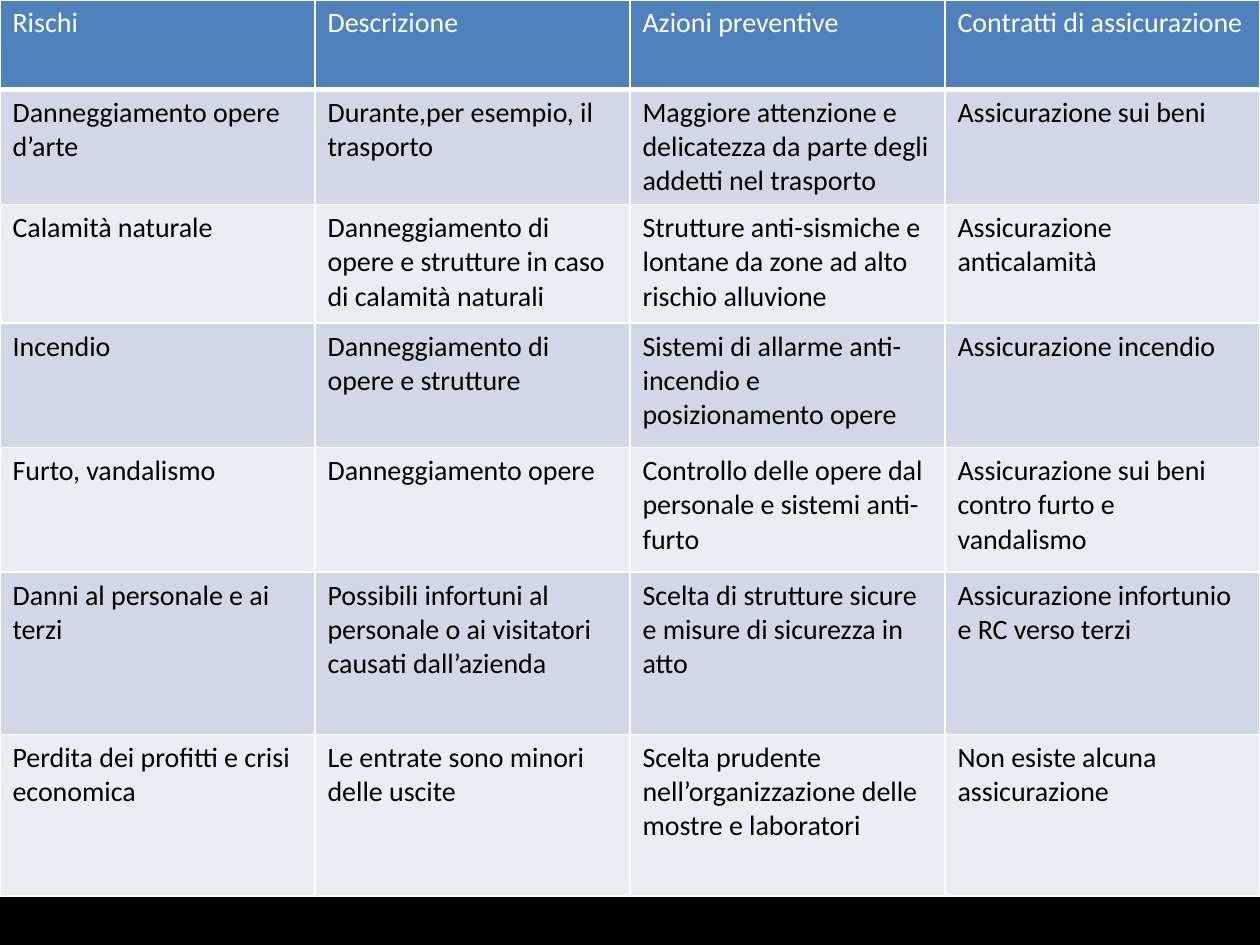
from pptx import Presentation
from pptx.dml.color import RGBColor
from pptx.oxml.ns import qn
from pptx.util import Pt
from lxml import etree

ROWS = [
    ("Rischi", "Descrizione", "Azioni preventive", "Contratti di assicurazione"),
    ("Danneggiamento opere d’arte",
     "Durante,per esempio, il trasporto",
     "Maggiore attenzione e delicatezza da parte degli addetti nel trasporto",
     "Assicurazione sui beni"),
    ("Calamità naturale",
     "Danneggiamento di opere e strutture in caso di calamità naturali",
     "Strutture anti-sismiche e lontane da zone ad alto rischio alluvione",
     "Assicurazione anticalamità"),
    ("Incendio",
     "Danneggiamento di opere e strutture",
     "Sistemi di allarme anti-incendio e posizionamento opere",
     "Assicurazione incendio"),
    ("Furto, vandalismo",
     "Danneggiamento opere",
     "Controllo delle opere dal personale e sistemi anti-furto",
     "Assicurazione sui beni contro furto e vandalismo"),
    ("Danni al personale e ai terzi",
     "Possibili infortuni al personale o ai visitatori causati dall’azienda",
     "Scelta di strutture sicure e misure di sicurezza in atto",
     "Assicurazione infortunio e RC verso terzi"),
    ("Perdita dei profitti e crisi economica",
     "Le entrate sono minori delle uscite",
     "Scelta prudente nell’organizzazione delle mostre e laboratori",
     "Non esiste alcuna assicurazione"),
]
ROW_HEIGHTS = [51, 65.8, 67.7, 71.2, 71.2, 92.8, 92.3]
SLIDE_W, SLIDE_H = 720, 540

THEME = {
    "background": "000000",
    "header": {"fill": "4F81BD", "text": "FFFFFF", "bottom": 3},
    "bands": [
        {"fill": "D0D8E8", "text": "000000", "bottom": 1},
        {"fill": "E9EDF4", "text": "000000", "bottom": 1},
    ],
    "border": "FFFFFF",
    "font": {"name": "Calibri", "size": Pt(16), "bold": False},
}


def add_borders(cell, bottom):
    tc_pr = cell._tc.get_or_add_tcPr()
    for side, width in {"L": 1, "R": 1, "T": 1, "B": bottom}.items():
        ln = etree.SubElement(tc_pr, qn(f"a:ln{side}"), w=str(Pt(width)))
        fill = etree.SubElement(ln, qn("a:solidFill"))
        etree.SubElement(fill, qn("a:srgbClr"), val=THEME["border"])


def fill_cell(cell, text, style):
    add_borders(cell, style["bottom"])
    cell.fill.solid()
    cell.fill.fore_color.rgb = RGBColor.from_string(style["fill"])
    r = cell.text_frame.paragraphs[0].add_run()
    r.text = text
    for name, value in THEME["font"].items():
        setattr(r.font, name, value)
    r.font.color.rgb = RGBColor.from_string(style["text"])


def main():
    prs = Presentation()
    prs.slide_width, prs.slide_height = Pt(SLIDE_W), Pt(SLIDE_H)
    s = prs.slides.add_slide(prs.slide_layouts[6])
    s.background.fill.solid()
    s.background.fill.fore_color.rgb = RGBColor.from_string(THEME["background"])

    n_cols = len(ROWS[0])
    table = s.shapes.add_table(len(ROWS), n_cols, 0, 0,
                               Pt(SLIDE_W), Pt(sum(ROW_HEIGHTS))).table
    for col in table.columns:
        col.width = Pt(SLIDE_W / n_cols)
    for i, (texts, height) in enumerate(zip(ROWS, ROW_HEIGHTS)):
        table.rows[i].height = Pt(height)
        style = THEME["bands"][(i - 1) % 2] if i else THEME["header"]
        for j, text in enumerate(texts):
            fill_cell(table.cell(i, j), text, style)

    prs.save("out.pptx")


if __name__ == "__main__":
    main()
